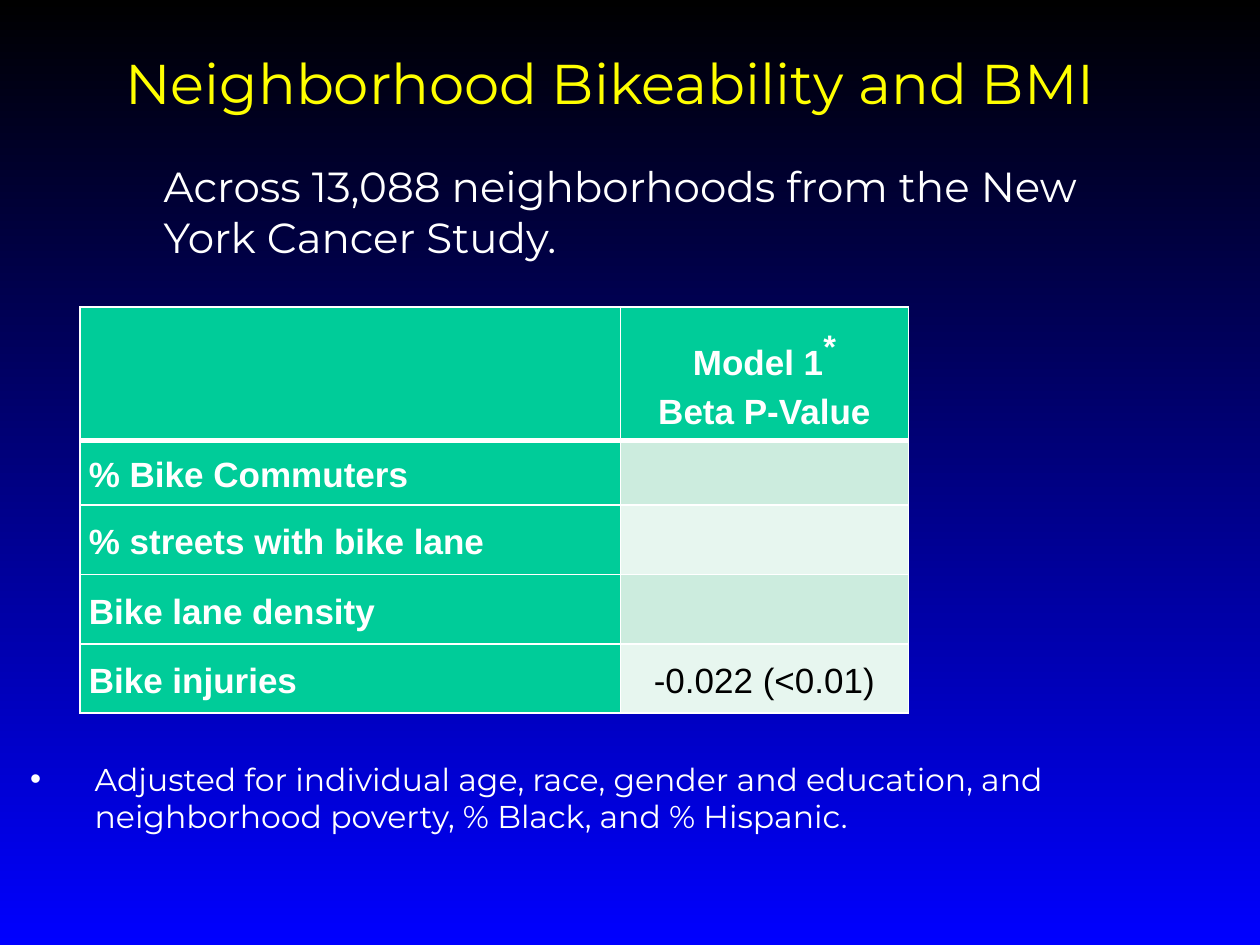
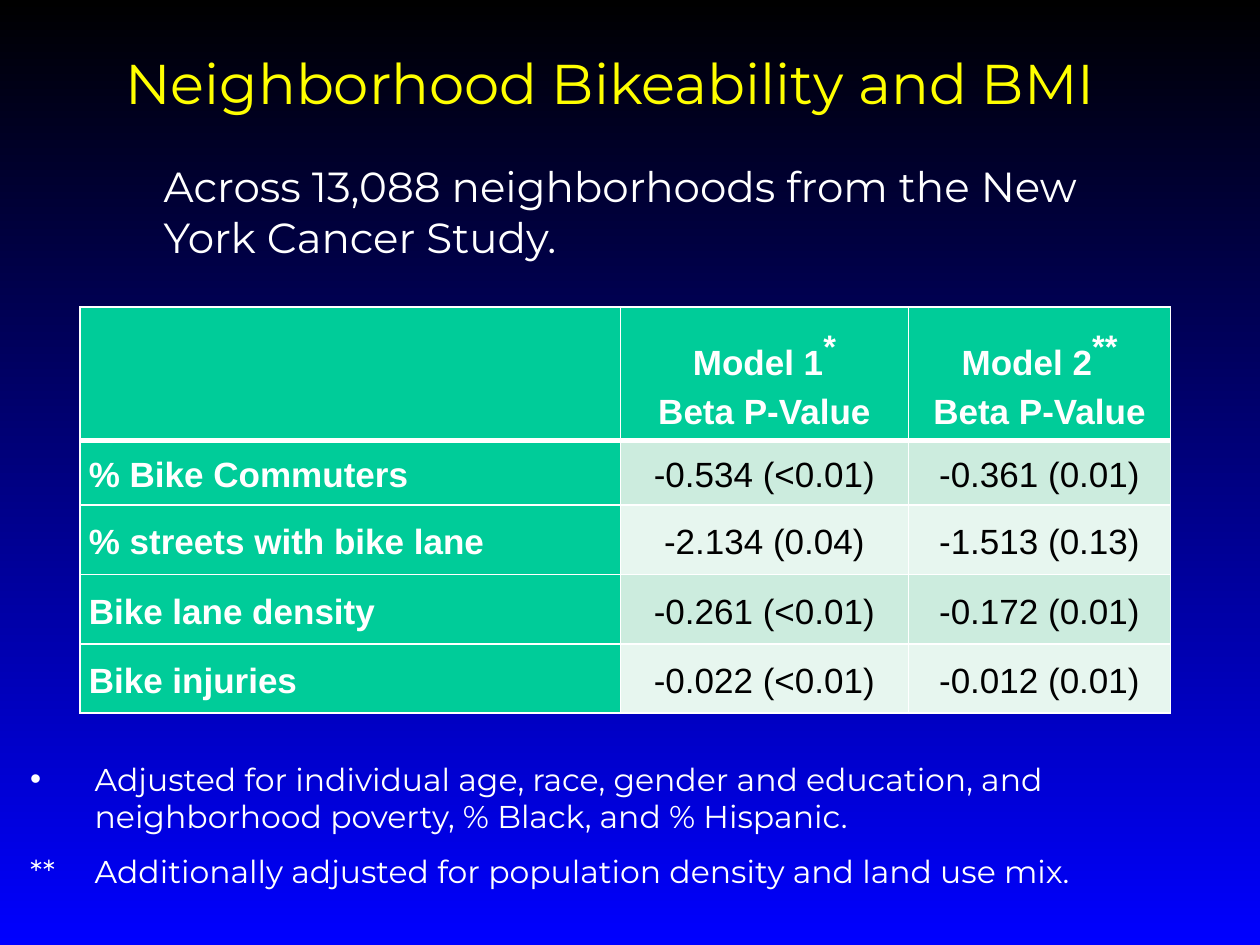
from lxml.etree import SubElement
from pptx import Presentation
from pptx.dml.color import RGBColor
from pptx.enum.text import MSO_ANCHOR, MSO_AUTO_SIZE, PP_ALIGN
from pptx.oxml.ns import qn
from pptx.util import Cm, Pt

COLORS = {
    "black": "000000", "blue": "0000FF", "yellow": "FFFF00", "white": "FFFFFF",
    "green": "00CC99", "band_dark": "CCECDE", "band_light": "E7F6EF",
}
STYLES = {
    "title": {"name": "Montserrat", "size": Pt(32), "color": "yellow"},
    "subtitle": {"name": "Montserrat", "size": Pt(24), "color": "white"},
    "note": {"name": "Montserrat", "size": Pt(18), "color": "white"},
    "label": {"name": "Arial", "size": Pt(20), "bold": True, "color": "white"},
    "mark": {"name": "Arial", "size": Pt(32), "bold": True, "color": "white"},
    "value": {"name": "Arial", "size": Pt(20), "bold": False, "color": "black"},
}
TITLE_BOX = (1.63, 0.86, 22, 1.63)
SUBTITLE_BOX = (3.05, 3.12, 19.15, 2.31)
TABLE_ORIGIN = (1.61, 6.19)
COL_WIDTHS = (10.9, 5.8, 5.29)
ROW_HEIGHTS = (2.69, 1.3, 1.4, 1.4, 1.4)
TITLE = "Neighborhood Bikeability and BMI"
SUBTITLE = "Across 13,088 neighborhoods from the New York Cancer Study."
MEASURES = ("% Bike Commuters", "% streets with bike lane", "Bike lane density", "Bike injuries")
ADJUSTED = ("Adjusted for individual age, race, gender and education, and "
            "neighborhood poverty, % Black, and % Hispanic.")
ADDITIONAL = "**\tAdditionally adjusted for population density and land use mix."
MODEL_1 = ("-0.534 (<0.01)", "-2.134 (0.04)", "-0.261 (<0.01)", "-0.022 (<0.01)")
MODEL_2 = ("-0.361 (0.01)", "-1.513 (0.13)", "-0.172 (0.01)", "-0.012 (0.01)")


def rgb(name):
    """Return a named colour as an RGBColor."""
    return RGBColor.from_string(COLORS[name])


def add_run(p, text, style):
    """Add a run in a named style to a paragraph."""
    r = p.add_run()
    r.text = text
    for key, value in STYLES[style].items():
        if key == "color":
            r.font.color.rgb = rgb(value)
        else:
            setattr(r.font, key, value)
    return r


def add_text(s, box, lines, style):
    """Add a wrapping text box with one paragraph per line."""
    tf = s.shapes.add_textbox(*map(Cm, box)).text_frame
    tf.word_wrap = True
    tf.auto_size = MSO_AUTO_SIZE.SHAPE_TO_FIT_TEXT
    for i, line in enumerate(lines):
        p = tf.add_paragraph() if i else tf.paragraphs[0]
        add_run(p, line, style)
    return tf


def add_background(s):
    """Fill the slide with a gradient from black down to blue."""
    fill = s.background.fill
    fill.gradient()
    fill.gradient_angle = 270
    for stop, position, name in zip(fill.gradient_stops, (0, 1), ("black", "blue")):
        stop.position = position
        stop.color.rgb = rgb(name)


def add_heading(s):
    """Add the title and the study line."""
    tf = add_text(s, TITLE_BOX, [TITLE], "title")
    tf.margin_right = Cm(0.9)
    tf.paragraphs[0].alignment = PP_ALIGN.CENTER
    add_text(s, SUBTITLE_BOX, [SUBTITLE], "subtitle")


def style_cell(cell, fill, top=1, bottom=1):
    """Give a cell its white borders, fill, margins and anchor."""
    tcPr = cell._tc.get_or_add_tcPr()
    for side, width in (("L", 1), ("R", 1), ("T", top), ("B", bottom)):
        ln = SubElement(tcPr, qn(f"a:ln{side}"), w=str(Pt(width)))
        SubElement(SubElement(ln, qn("a:solidFill")), qn("a:srgbClr"), val=COLORS["white"])
    cell.fill.solid()
    cell.fill.fore_color.rgb = rgb(fill)
    layout = {"margin_left": Cm(0.18), "margin_right": Cm(0.18), "margin_top": 0,
              "margin_bottom": 0, "vertical_anchor": MSO_ANCHOR.MIDDLE}
    for key, value in layout.items():
        setattr(cell, key, value)


def write_cell(cell, lines, style, align):
    """Write lines into a cell."""
    for i, line in enumerate(lines):
        p = cell.text_frame.add_paragraph() if i else cell.text_frame.paragraphs[0]
        p.alignment, p.line_spacing = align, 1.15
        if line:
            add_run(p, line, style)


def add_results(s, models):
    """Add the table with one column for each model's results."""
    widths = COL_WIDTHS[:len(models) + 1]
    box = (*TABLE_ORIGIN, sum(widths), sum(ROW_HEIGHTS))
    table = s.shapes.add_table(len(ROW_HEIGHTS), len(widths), *map(Cm, box)).table
    table.first_row = table.horz_banding = False
    for col, width in zip(table.columns, widths):
        col.width = Cm(width)
    for i, height in enumerate(ROW_HEIGHTS):
        table.rows[i].height = Cm(height)
        band = "band_dark" if i % 2 else "band_light"
        for j in range(len(widths)):
            fill = "green" if i == 0 or j == 0 else band
            style_cell(table.cell(i, j), fill, 3 if i == 1 else 1, 3 if i == 0 else 1)
    for i, measure in enumerate(MEASURES, 1):
        write_cell(table.cell(i, 0), [measure], "label", PP_ALIGN.LEFT)
    for j, values in enumerate(models, 1):
        head = table.cell(0, j)
        write_cell(head, [f"Model {j}", "Beta P-Value"], "label", PP_ALIGN.CENTER)
        mark = add_run(head.text_frame.paragraphs[0], "*" * j, "mark")
        mark.font._element.set("baseline", "30000")
        for i, value in enumerate(values, 1):
            write_cell(table.cell(i, j), [value], "value", PP_ALIGN.CENTER)


def add_notes(s, notes):
    """Add the adjustment notes with hanging indents, the first one bulleted."""
    box = (0.36, 15.19, 24.87, 1.8 if len(notes) == 1 else 3.2)
    tf = add_text(s, box, notes, "note")
    for i, p in enumerate(tf.paragraphs):
        p.space_before = Pt(9.5 if i else 0)
        pPr = p._p.get_or_add_pPr()
        pPr.set("marL", str(Cm(1.3)))
        pPr.set("indent", str(-Cm(1.3)))
        if i == 0:
            SubElement(pPr, qn("a:buFont"), typeface="Arial")
            SubElement(pPr, qn("a:buChar"), char="•")


def add_results_slide(prs, models, notes):
    """Add a slide with heading, results table and notes."""
    s = prs.slides.add_slide(prs.slide_layouts[6])
    add_background(s)
    add_heading(s)
    add_results(s, models)
    add_notes(s, notes)


def main():
    """Build and save the presentation."""
    prs = Presentation()
    prs.slide_width, prs.slide_height = Cm(25.4), Cm(19.05)
    add_results_slide(prs, [("", "", "", MODEL_1[-1])], [ADJUSTED])
    add_results_slide(prs, [MODEL_1, MODEL_2], [ADJUSTED, ADDITIONAL])
    prs.save("out.pptx")


if __name__ == "__main__":
    main()
